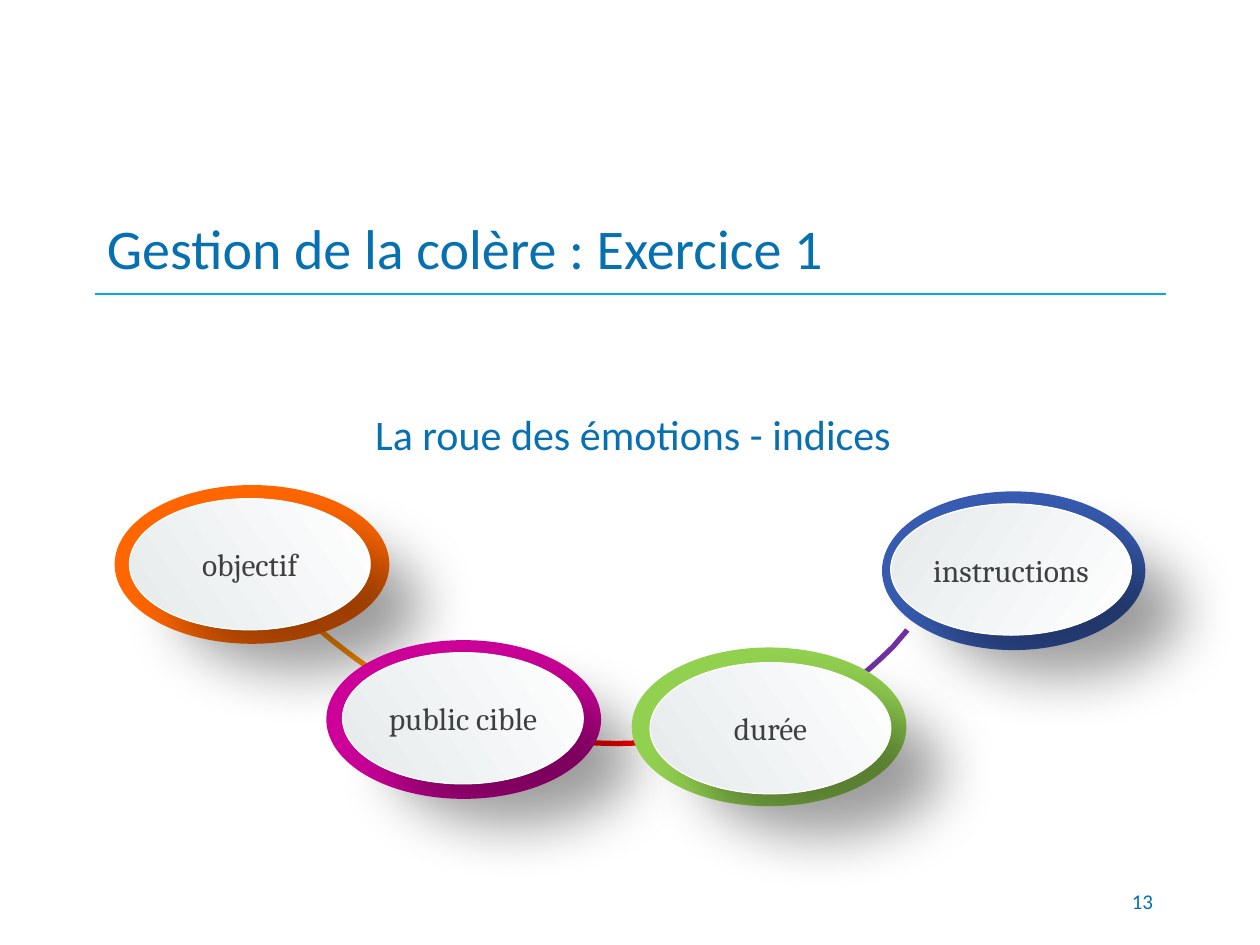
import pptx
import pptx.util
import pptx.dml.color
import pptx.enum.shapes
import pptx.enum.text
import pptx.oxml

Pt = pptx.util.Pt
RGB = pptx.dml.color.RGBColor.from_string
ALIGN = pptx.enum.text.PP_ALIGN
ANCHOR = pptx.enum.text.MSO_ANCHOR
OVAL = pptx.enum.shapes.MSO_SHAPE.OVAL
A_NS = 'xmlns:a="http://schemas.openxmlformats.org/drawingml/2006/main"'

COLORS = {
    "title": "0770B1", "rule": "0BA7DF", "label": "404040",
    "white": "FFFFFF", "grey": "E6EAEB",
    "blue": "375BB0", "orange": "FF6600", "magenta": "CC0099", "green": "92D050",
    "purple_arc": "7030A0", "red_arc": "FF0000", "orange_arc": "FF8A00",
}
SHADOW = (
    f'<a:effectLst {A_NS}><a:outerShdw blurRad="{Pt(33)}" dist="{Pt(36.7)}" '
    f'dir="{39 * 60000}" algn="ctr" rotWithShape="0">'
    '<a:srgbClr val="000000"><a:alpha val="38000"/></a:srgbClr>'
    '</a:outerShdw></a:effectLst>'
)

prs = pptx.Presentation()
prs.slide_width, prs.slide_height = Pt(720), Pt(540)
s = prs.slides.add_slide(prs.slide_layouts[6])


def write(sp, text, size, font, color, align, anchor):
    tf = sp.text_frame
    tf.word_wrap = True
    tf.vertical_anchor = anchor
    p = tf.paragraphs[0]
    p.alignment = align
    r = p.add_run()
    r.text = text
    r.font.size = Pt(size)
    r.font.name = font
    r.font.color.rgb = RGB(COLORS[color])
    return p


def draw_arc(color, start, *curves):
    """Trace cubic curves, each given as two control points and an end."""
    points = []
    p0 = start
    for c1, c2, p3 in curves:
        for i in range(1, 13):
            t = i / 12
            u = 1 - t
            points.append(tuple(
                round(Pt(1) * (u**3 * a + 3 * u * u * t * b + 3 * u * t * t * c + t**3 * d))
                for a, b, c, d in zip(p0, c1, c2, p3)))
        p0 = p3
    fb = s.shapes.build_freeform(Pt(start[0]), Pt(start[1]))
    fb.add_line_segments(points, close=False)
    sp = fb.convert_to_shape()
    sp.shadow.inherit = False
    sp.fill.background()
    sp.line.color.rgb = RGB(COLORS[color])
    sp.line.width = Pt(3)


# Rule under the title
rule = s.shapes.add_connector(pptx.enum.shapes.MSO_CONNECTOR.STRAIGHT,
                              Pt(54), Pt(168), Pt(666), Pt(168))
rule.line.color.rgb = RGB(COLORS["rule"])
rule.line.width = Pt(0.75)
rule._element.spPr.append(pptx.oxml.parse_xml(f"<a:effectLst {A_NS}/>"))

# Title and slide number
title = s.shapes.add_textbox(Pt(54), Pt(114), Pt(612), Pt(54))
write(title, "Gestion de la colère : Exercice 1", 32, "Calibri", "title",
      ALIGN.LEFT, ANCHOR.MIDDLE)
number = s.shapes.add_textbox(Pt(516), Pt(500.4), Pt(150), Pt(28.8))
write(number, "13", 12, "Calibri", "title", ALIGN.RIGHT, ANCHOR.MIDDLE)

# Linking arcs, all behind the ovals
draw_arc("purple_arc", (518.4, 360),
         ((516.2, 362.9), (513.4, 365.8), (510.5, 369.4)),
         ((501.1, 378.7), (491, 387.4), (481, 395.3)),
         ((468, 403.9), (454.3, 411.1), (439.9, 416.9)))
draw_arc("red_arc", (323.3, 423.4),
         ((339.1, 424.8), (355, 425.5), (370.1, 424.1)),
         ((378.7, 424.1), (386.6, 422.6), (394.6, 421.9)))
draw_arc("orange_arc", (177.8, 355.7),
         ((193, 369.4), (211.7, 383), (231.8, 395.3)))

# Ovals: label, colour, ring left/top/width, face left/top, mirrored
ovals = [
    ("instructions", "blue", 504, 280.8, 150.5, 509, 288, False),
    ("objectif", "orange", 65.5, 277.2, 157, 74, 285, True),
    ("public cible", "magenta", 186.5, 365.8, 157, 195.8, 373, True),
    ("durée", "green", 361, 370, 157, 371.5, 378.7, True),
]
for label, color, x, y, w, face_x, face_y, mirrored in ovals:
    ring = s.shapes.add_shape(OVAL, Pt(x), Pt(y), Pt(w), Pt(90.7))
    ring.shadow.inherit = False
    ring.fill.solid()
    ring.fill.fore_color.rgb = RGB(COLORS[color])
    ring.line.fill.background()

    face = s.shapes.add_shape(OVAL, Pt(face_x), Pt(face_y), Pt(137.5), Pt(74.9))
    face.fill.gradient()
    face.fill.gradient_angle = 360 - 35
    stops = ("white", "grey") if mirrored else ("grey", "white")
    for stop, shade in zip(face.fill.gradient_stops, stops):
        stop.color.rgb = RGB(COLORS[shade])
    face.line.color.rgb = RGB(COLORS["white"])
    face.line.width = Pt(0)
    face._element.spPr.append(pptx.oxml.parse_xml(SHADOW))
    if mirrored:
        for sp in (ring, face):
            sp._element.spPr.xfrm.set("flipH", "1")
    tf = face.text_frame
    tf.margin_left = tf.margin_right = tf.margin_top = tf.margin_bottom = 0
    write(face, label, 18, "Cambria", "label", ALIGN.CENTER, ANCHOR.MIDDLE)

# Subtitle
subtitle = s.shapes.add_textbox(Pt(186.5), Pt(225.4), Pt(350.6), Pt(40.3))
p = write(subtitle, "La roue des émotions - indices", 24, "Calibri", "title",
          ALIGN.CENTER, ANCHOR.TOP)
p.line_spacing = 1.15
p.space_after = Pt(6)

prs.save("out.pptx")
